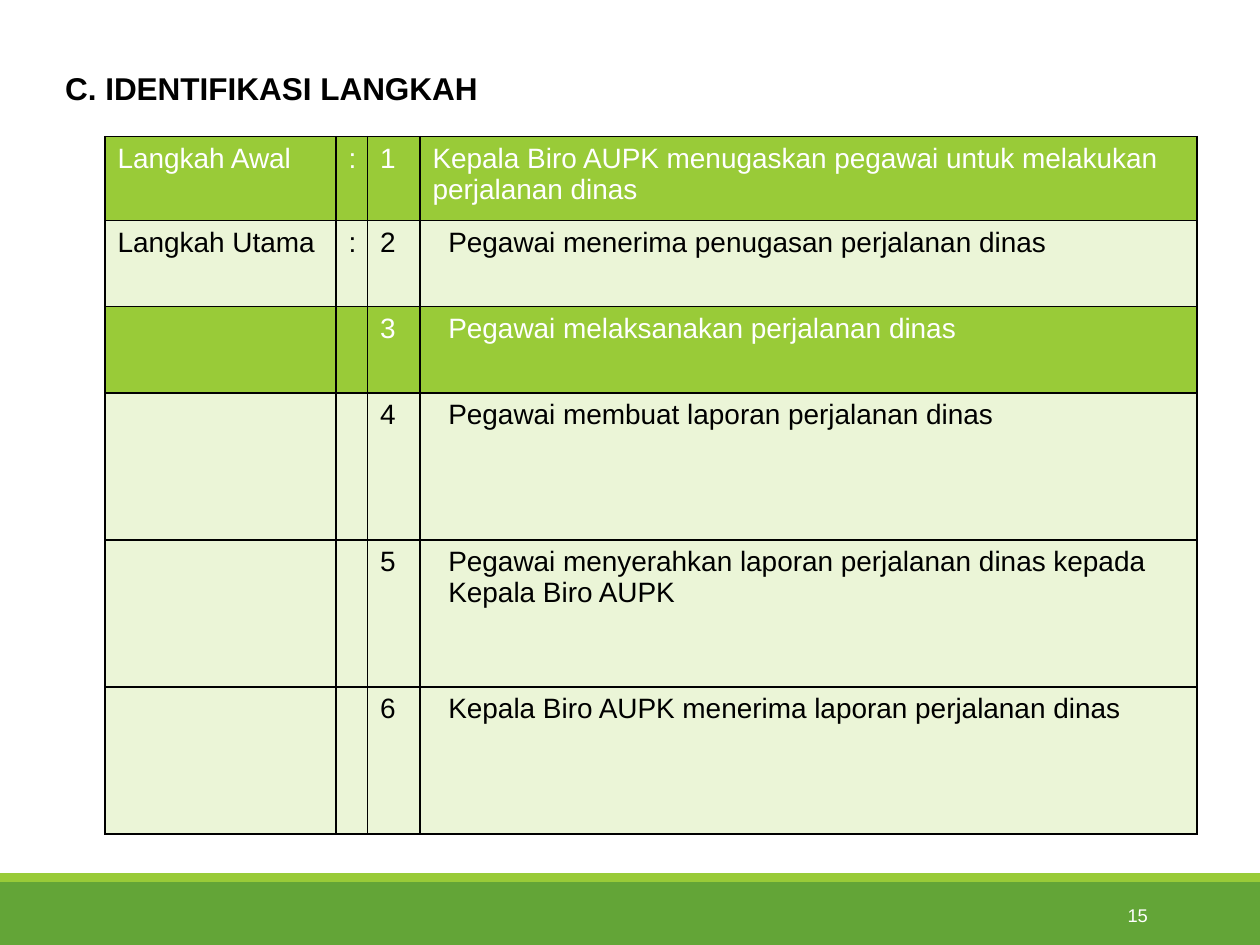
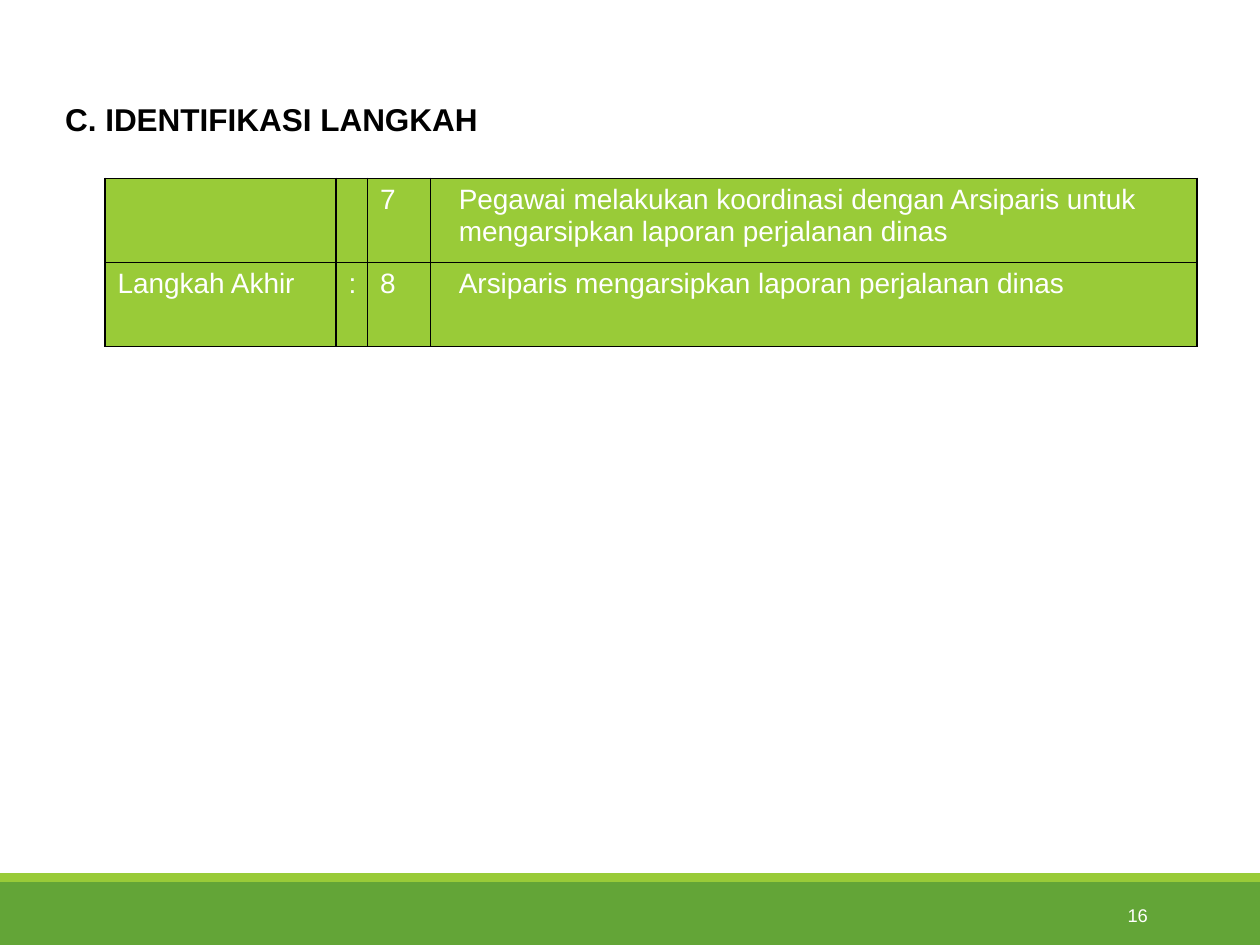
from pptx import Presentation
from pptx.dml.color import RGBColor
from pptx.enum.shapes import MSO_SHAPE
from pptx.enum.text import MSO_ANCHOR, MSO_AUTO_SIZE, PP_ALIGN
from pptx.oxml.ns import qn
from pptx.util import Pt
from lxml import etree

RECT = MSO_SHAPE.RECTANGLE
TOP, MIDDLE = MSO_ANCHOR.TOP, MSO_ANCHOR.MIDDLE
LEFT, RIGHT = PP_ALIGN.LEFT, PP_ALIGN.RIGHT
NO_FIT = MSO_AUTO_SIZE.NONE

WIDTH, HEIGHT = 720, 540
TITLE_ONLY = 5
FONT = "Arial"
COLORS = {
    "green": "63A537",
    "lime": "99CB38",
    "pale": "EBF5D7",
    "black": "000000",
    "white": "FFFFFF",
}
TITLE = {"size": Pt(18), "bold": True}
BODY = {"size": Pt(16), "bold": False}
NUMBER = {"size": Pt(10.5), "bold": False}

TABLE_LEFT = 60
STEP_INDENT = 9
NUMBER_COL, STEP_COL = 2, 3
THIN_SIDES = {("L", STEP_COL), ("R", NUMBER_COL)}

# Each row: height, fill, cell texts
FIRST_STEPS = [
    (48, "lime", ("Langkah Awal", ":", "1",
                  "Kepala Biro AUPK menugaskan pegawai untuk melakukan perjalanan dinas")),
    (49.25, "pale", ("Langkah Utama", ":", "2", "Pegawai menerima penugasan perjalanan dinas")),
    (49.25, "lime", ("", "", "3", "Pegawai melaksanakan perjalanan dinas")),
    (84, "pale", ("", "", "4", "Pegawai membuat laporan perjalanan dinas")),
    (84, "pale", ("", "", "5",
                  "Pegawai menyerahkan laporan perjalanan dinas kepada Kepala Biro AUPK")),
    (84, "pale", ("", "", "6", "Kepala Biro AUPK menerima laporan perjalanan dinas")),
]
LAST_STEPS = [
    (48, "lime", ("", "", "7", "Pegawai melakukan koordinasi dengan Arsiparis untuk "
                  "mengarsipkan laporan perjalanan dinas")),
    (48, "lime", ("Langkah Akhir", ":", "8", "Arsiparis mengarsipkan laporan perjalanan dinas")),
]
# Each slide: number, title top, table top, column widths, rows
SLIDES = [
    (15, 36, 78, (132, 18, 30, 444), FIRST_STEPS),
    (16, 53.25, 102, (132, 18, 36, 438), LAST_STEPS),
]


def rgb(name):
    return RGBColor.from_string(COLORS[name])


class Deck:
    def __init__(self):
        self.prs = Presentation()
        self.prs.slide_width, self.prs.slide_height = Pt(WIDTH), Pt(HEIGHT)
        self.slide = None

    def add_slide(self, number):
        layout = self.prs.slide_layouts[TITLE_ONLY]
        self.slide = self.prs.slides.add_slide(layout)
        self.band(504, 36, "green")
        self.band(499, 5, "lime")
        self.page_number(number)

    def text(self, tf, text, color, style, align=LEFT):
        p = tf.paragraphs[0]
        p.alignment = align
        r = p.add_run()
        r.text = text
        r.font.name = FONT
        r.font.color.rgb = rgb(color)
        for name, value in style.items():
            setattr(r.font, name, value)
        return p

    def band(self, top, height, color):
        sp = self.slide.shapes.add_shape(RECT, 0, Pt(top), Pt(WIDTH), Pt(height))
        sp.shadow.inherit = False
        sp.fill.solid()
        sp.fill.fore_color.rgb = rgb(color)
        sp.line.fill.background()

    def page_number(self, number):
        sp = self.slide.shapes.add_textbox(Pt(585), Pt(508.5), Pt(78), Pt(28.5))
        tf = sp.text_frame
        tf.word_wrap = True
        tf.vertical_anchor = MIDDLE
        self.text(tf, str(number), "white", NUMBER, RIGHT)

    def title(self, text, top):
        sp = self.slide.shapes.title
        sp.left, sp.top, sp.width, sp.height = Pt(30), Pt(top), Pt(250.5), Pt(29)
        tf = sp.text_frame
        tf.auto_size = NO_FIT
        tf.word_wrap = False
        tf.vertical_anchor = TOP
        self.text(tf, text, "black", TITLE)

    def borders(self, cell, col):
        tc_pr = cell._tc.get_or_add_tcPr()
        for side in "LRTB":
            width = Pt(0.75 if (side, col) in THIN_SIDES else 1)
            ln = etree.SubElement(tc_pr, qn(f"a:ln{side}"), w=str(width))
            fill = etree.SubElement(ln, qn("a:solidFill"))
            etree.SubElement(fill, qn("a:srgbClr"), val=COLORS["black"])

    def cell(self, cell, col, text, fill, indent):
        self.borders(cell, col)
        cell.fill.solid()
        cell.fill.fore_color.rgb = rgb(fill)
        if not text:
            return
        p = self.text(cell.text_frame, text, "white" if fill == "lime" else "black", BODY)
        if indent:
            p._p.get_or_add_pPr().set("marL", str(Pt(STEP_INDENT)))

    def step_table(self, top, widths, rows):
        height = sum(row[0] for row in rows)
        frame = self.slide.shapes.add_table(
            len(rows), len(widths), Pt(TABLE_LEFT), Pt(top), Pt(sum(widths)), Pt(height))
        table = frame.table
        table.first_row = table.horz_banding = False
        for col, width in enumerate(widths):
            table.columns[col].width = Pt(width)
        for row, (row_height, fill, texts) in enumerate(rows):
            table.rows[row].height = Pt(row_height)
            for col, text in enumerate(texts):
                indent = col == STEP_COL and texts[NUMBER_COL] != "1"
                self.cell(table.cell(row, col), col, text, fill, indent)


def main():
    deck = Deck()
    for number, title_top, table_top, widths, rows in SLIDES:
        deck.add_slide(number)
        deck.step_table(table_top, widths, rows)
        deck.title("C. IDENTIFIKASI LANGKAH", title_top)
    deck.prs.save("out.pptx")


if __name__ == "__main__":
    main()
